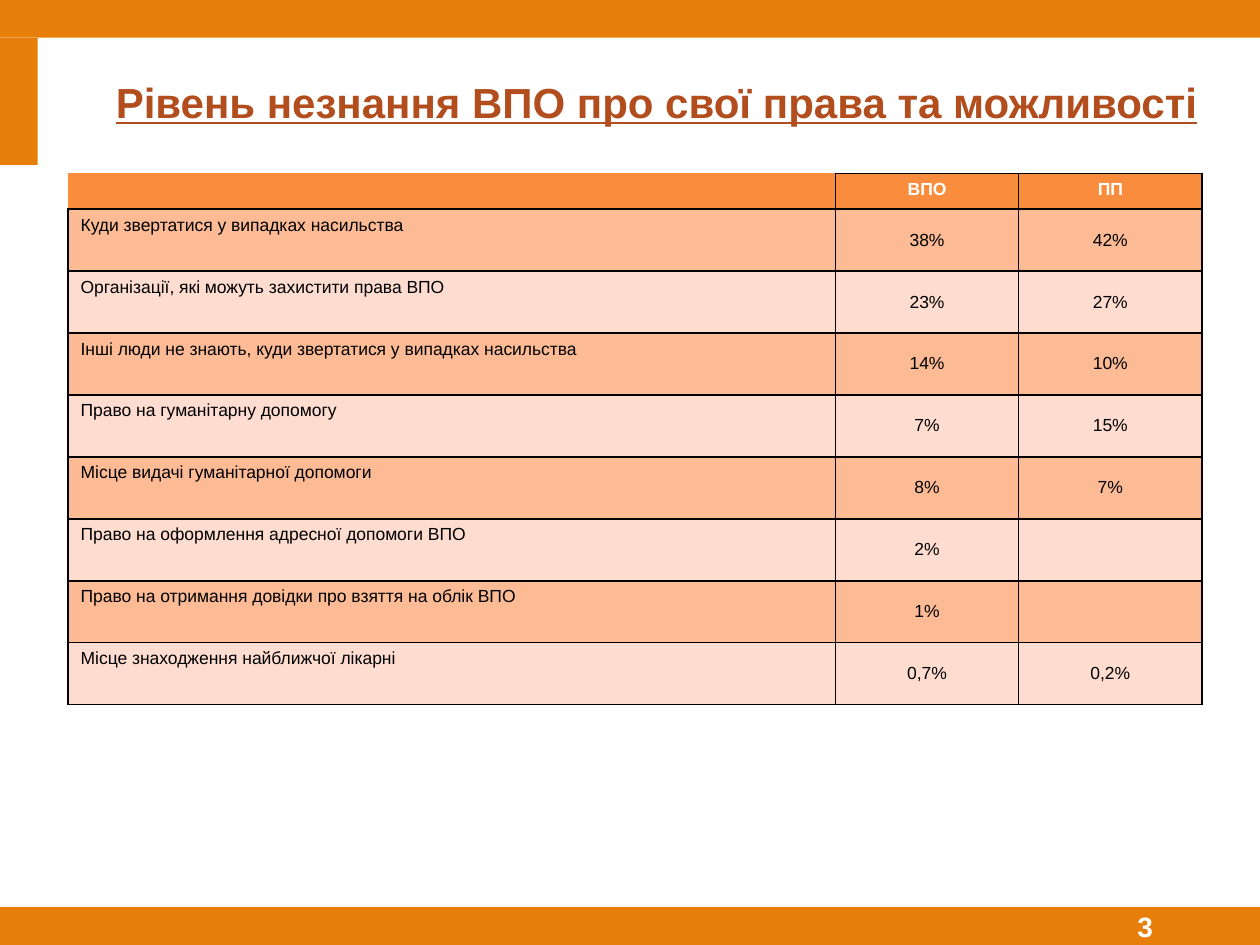
from dataclasses import dataclass
from typing import NamedTuple

from lxml.etree import SubElement
from pptx import Presentation
from pptx.dml.color import RGBColor
from pptx.enum.shapes import MSO_SHAPE
from pptx.enum.text import MSO_ANCHOR, PP_ALIGN
from pptx.oxml.ns import qn
from pptx.util import Inches, Pt


@dataclass(frozen=True)
class Theme:
    bar: str = "E87E0A"
    title: str = "B24D1D"
    head: str = "FA8D3D"
    bands: tuple = ("FDBB95", "FEDDD0")
    white: str = "FFFFFF"
    black: str = "000000"
    font: str = "Arial"
    title_size: int = 24
    number_size: int = 16
    table_size: int = 10
    border_width: int = 1


class Box(NamedTuple):
    """Left, top, width and height in grid units."""
    col: float
    row: float
    cols: float
    rows: float


class Entry(NamedTuple):
    topic: str
    displaced: str
    affected: str


THEME = Theme()
COLS, ROWS = 100, 75
UNIT = Inches(10) / COLS
BAR = 3

BARS = [
    Box(0, ROWS - BAR, COLS, BAR),
    Box(0, 0, COLS, BAR),
    Box(0, BAR, BAR, 10.1),
]
TITLE = Box(BAR, BAR, COLS - BAR, 10.1)
NUMBER = Box(81.8, ROWS - BAR, 18.2, BAR)
TABLE_COL, TABLE_ROW = 5.4, 13.75
COL_WIDTHS = (60.9, 14.55, 14.55)
HEAD_HEIGHT, ENTRY_HEIGHT = 2.84, 4.92

HEADER = Entry("", "ВПО", "ПП")
ENTRIES = [
    Entry("Куди звертатися у випадках насильства", "38%", "42%"),
    Entry("Організації, які можуть захистити права ВПО", "23%", "27%"),
    Entry("Інші люди не знають, куди звертатися у випадках насильства", "14%", "10%"),
    Entry("Право на гуманітарну допомогу", "7%", "15%"),
    Entry("Місце видачі гуманітарної допомоги", "8%", "7%"),
    Entry("Право на оформлення адресної допомоги ВПО", "2%", ""),
    Entry("Право на отримання довідки про взяття на облік ВПО", "1%", ""),
    Entry("Місце знаходження найближчої лікарні", "0,7%", "0,2%"),
]


def units(n: float) -> int:
    return round(n * UNIT)


def place(box: Box) -> list[int]:
    return [units(n) for n in box]


def set_all(obj, **values) -> None:
    for name, value in values.items():
        setattr(obj, name, value)


def write(tf, text: str, size: int, color: str, align, **style) -> None:
    p = tf.paragraphs[0]
    p.alignment = align
    if not text:
        # An empty cell still needs a text size, or its row grows.
        SubElement(p._p, qn("a:endParaRPr"), sz=str(size * 100))
        return
    r = p.add_run()
    r.text = text
    set_all(r.font, name=THEME.font, size=Pt(size), **style)
    r.font.color.rgb = RGBColor.from_string(color)


def add_bar(s, box: Box) -> None:
    sp = s.shapes.add_shape(MSO_SHAPE.RECTANGLE, *place(box))
    sp.shadow.inherit = False
    sp.fill.solid()
    sp.fill.fore_color.rgb = RGBColor.from_string(THEME.bar)
    sp.line.fill.background()


def add_label(s, box: Box, text: str, size: int, color: str, align,
              left: float, right: float, **style) -> None:
    """Add a one-line bold text with side insets in grid units."""
    tf = s.shapes.add_textbox(*place(box)).text_frame
    set_all(tf, word_wrap=True, vertical_anchor=MSO_ANCHOR.MIDDLE,
            margin_left=units(left), margin_right=units(right))
    write(tf, text, size, color, align, bold=True, **style)


def add_borders(cell, sides: str) -> None:
    """Draw the named sides; must come before the cell's fill in the XML."""
    tcPr = cell._tc.get_or_add_tcPr()
    for side in "LRTB":
        ln = SubElement(tcPr, qn(f"a:ln{side}"), w=str(Pt(THEME.border_width)))
        if side in sides:
            fill = SubElement(ln, qn("a:solidFill"))
            SubElement(fill, qn("a:srgbClr"), val=THEME.black)
        else:
            SubElement(ln, qn("a:noFill"))


def fill_cell(cell, text: str, row: int, col: int) -> None:
    is_head, is_topic = row == 0, col == 0
    add_borders(cell, "RB" if is_head and is_topic else "LRTB")
    cell.fill.solid()
    fill = THEME.head if is_head else THEME.bands[(row - 1) % 2]
    cell.fill.fore_color.rgb = RGBColor.from_string(fill)
    top = is_head or is_topic
    cell.vertical_anchor = MSO_ANCHOR.TOP if top else MSO_ANCHOR.MIDDLE
    write(cell.text_frame, text, THEME.table_size,
          THEME.white if is_head else THEME.black,
          PP_ALIGN.LEFT if is_topic else PP_ALIGN.CENTER, bold=is_head)


def add_entries(s) -> None:
    lines = [HEADER, *ENTRIES]
    heights = [HEAD_HEIGHT] + [ENTRY_HEIGHT] * len(ENTRIES)
    box = Box(TABLE_COL, TABLE_ROW, sum(COL_WIDTHS), sum(heights))
    table = s.shapes.add_table(len(lines), len(COL_WIDTHS), *place(box)).table
    for column, width in zip(table.columns, COL_WIDTHS):
        column.width = units(width)
    for i, (line, height) in enumerate(zip(lines, heights)):
        table.rows[i].height = units(height)
        for j, text in enumerate(line):
            fill_cell(table.cell(i, j), text, i, j)


def main() -> None:
    prs = Presentation()
    set_all(prs, slide_width=units(COLS), slide_height=units(ROWS))
    s = prs.slides.add_slide(prs.slide_layouts[6])
    for box in BARS:
        add_bar(s, box)
    add_label(s, TITLE, "Рівень незнання ВПО про свої права та можливості",
              THEME.title_size, THEME.title, PP_ALIGN.CENTER, 2.2, 1,
              underline=True)
    add_entries(s)
    add_label(s, NUMBER, "3", THEME.number_size, THEME.white,
              PP_ALIGN.RIGHT, 1, 8.5)
    prs.save("out.pptx")


if __name__ == "__main__":
    main()
